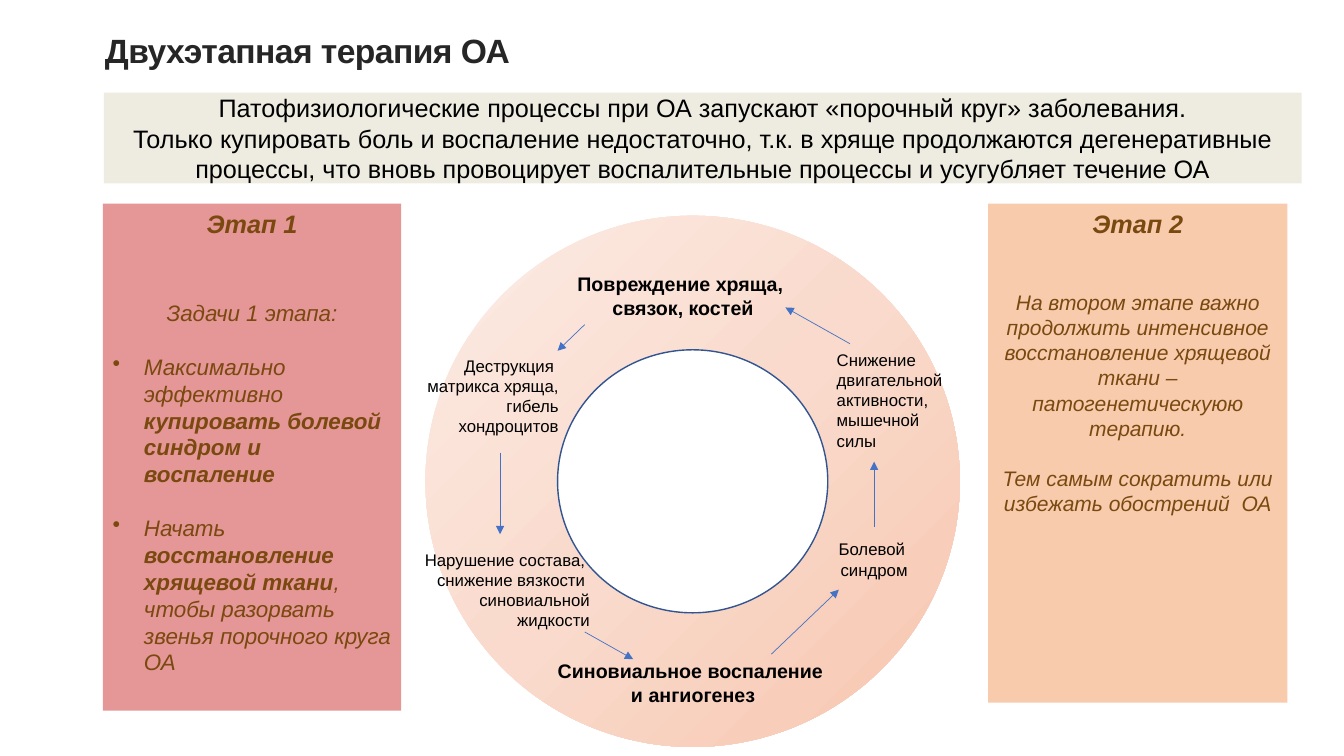
from lxml import etree
from pptx import Presentation
from pptx.dml.color import RGBColor
from pptx.enum.shapes import MSO_CONNECTOR, MSO_SHAPE
from pptx.enum.text import MSO_ANCHOR, MSO_AUTO_SIZE, PP_ALIGN
from pptx.oxml import parse_xml
from pptx.oxml.ns import nsdecls, qn
from pptx.util import Inches, Pt

LEFT, CENTER, RIGHT = PP_ALIGN.LEFT, PP_ALIGN.CENTER, PP_ALIGN.RIGHT
TOP, MIDDLE = MSO_ANCHOR.TOP, MSO_ANCHOR.MIDDLE
RECTANGLE, OVAL = MSO_SHAPE.RECTANGLE, MSO_SHAPE.OVAL
BLACK = RGBColor(0x00, 0x00, 0x00)
WHITE = RGBColor(0xFF, 0xFF, 0xFF)
TITLE_GREY = RGBColor(0x26, 0x26, 0x26)
BANNER_BEIGE = RGBColor(0xEE, 0xEC, 0xE1)
STAGE_RED = RGBColor(0xC0, 0x00, 0x00)
STAGE_PEACH = RGBColor(0xF8, 0xCB, 0xAD)
STAGE_BROWN = RGBColor(0x79, 0x49, 0x0F)
HOLE_LINE = RGBColor(0x32, 0x54, 0x91)
ARROW_BLUE = RGBColor(0x44, 0x72, 0xC4)
RING_STOPS = [(0, RGBColor(0xF7, 0xC5, 0xAE)), (50, RGBColor(0xF9, 0xDA, 0xCC)),
              (100, RGBColor(0xFC, 0xEC, 0xE6))]
FONT = "Arial"
LINE_HEIGHT = 1.2  # share of the font size

# Content
TITLE = "Двухэтапная терапия ОА"
BANNER = [
    "Патофизиологические процессы при ОА запускают «порочный круг» заболевания.",
    "Только купировать боль и воспаление недостаточно, т.к. в хряще продолжаются "
    "дегенеративные процессы, что вновь провоцирует воспалительные процессы и "
    "усугубляет течение ОА",
]
# Ring labels: left, top, width, size, bold, alignment, lines
LABELS = [
    (5.62, 2.65, 2.31, 14, True, CENTER, ["Повреждение хряща, ", "связок, костей"]),
    (4.12, 3.48, 1.52, 12, False, RIGHT,
     ["Деструкция ", "матрикса хряща,", "гибель", "хондроцитов"]),
    (4.10, 5.40, 1.85, 12, False, RIGHT,
     ["Нарушение состава, ", "снижение вязкости ", "синовиальной", "жидкости"]),
    (5.42, 6.49, 2.91, 14, True, CENTER, ["Синовиальное воспаление ", "и ангиогенез"]),
    (8.21, 5.30, 0.92, 12, False, CENTER, ["Болевой ", "синдром"]),
    (8.20, 3.42, 1.31, 12, False, LEFT,
     ["Снижение", "двигательной", "активности,", "мышечной", "силы"]),
]
# Arrows round the ring: from x, from y, to x, to y
ARROWS = [
    (5.80, 3.22, 5.53, 3.48), (4.96, 4.49, 4.96, 5.30), (5.80, 6.27, 6.28, 6.54),
    (7.65, 6.49, 8.32, 5.85), (8.67, 5.23, 8.67, 4.58), (8.43, 3.41, 7.79, 3.05),
]
# Stage paragraphs: blank lines before (in points of type), bulleted, (text, bold) runs
STAGES = [
    {"box": (1.02, 2.02, 2.96, 5.03), "fill": STAGE_RED, "opacity": 41, "size": 16,
     "heading": "Этап 1", "body": [
         (36, False, [("Задачи 1 этапа:", False)]),
         (16, True, [("Максимально эффективно ", False),
                     ("купировать болевой синдром и воспаление", True)]),
         (16, True, [("Начать ", False), ("восстановление хрящевой ткани", True),
                     (", чтобы разорвать звенья порочного круга ОА", False)])]},
    {"box": (9.80, 2.02, 2.97, 4.95), "fill": STAGE_PEACH, "opacity": 100, "size": 15,
     "heading": "Этап 2", "body": [
         (30, False, [("На втором этапе важно продолжить интенсивное восстановление "
                       "хрящевой ткани – патогенетическуюю терапию.", False)]),
         (15, False, [("Тем самым сократить или избежать обострений  ОА", False)])]},
]

presentation = Presentation()
presentation.slide_width, presentation.slide_height = Inches(13.33), Inches(7.5)
slide = presentation.slides.add_slide(presentation.slide_layouts[5])


def add_filled_shape(kind, box, color):
    shape = slide.shapes.add_shape(kind, *map(Inches, box))
    shape.shadow.inherit = False
    shape.fill.solid()
    shape.fill.fore_color.rgb = color
    shape.line.fill.background()
    return shape


def style(paragraph, size, color, alignment, bold=False, italic=False):
    paragraph.alignment = alignment
    font = paragraph.font
    font.name, font.size, font.bold, font.italic = FONT, Pt(size), bold, italic
    font.color.rgb = color


def write_lines(frame, lines, size, alignment, bold=False):
    for index, line in enumerate(lines):
        paragraph = frame.paragraphs[0] if index == 0 else frame.add_paragraph()
        paragraph.text = line
        style(paragraph, size, BLACK, alignment, bold)


def add_bullet(paragraph):
    properties = paragraph._p.get_or_add_pPr()
    properties.set("marL", str(Inches(0.31)))
    properties.set("indent", str(-Inches(0.31)))
    bullet = parse_xml(f'<a:buChar {nsdecls("a")} char="•"/>')
    properties.insert_element_before(bullet, "a:tabLst", "a:defRPr", "a:extLst")


# Title
title = slide.shapes.title
title.left, title.top, title.width, title.height = map(Inches, (0.94, 0.25, 12.33, 0.5))
title.text_frame.text = TITLE
title.text_frame.vertical_anchor = MIDDLE
title.text_frame.auto_size = MSO_AUTO_SIZE.NONE
heading = title.text_frame.paragraphs[0]
style(heading, 24, TITLE_GREY, LEFT, bold=True)
heading.runs[0]._r.get_or_add_rPr().set("spc", "-40")

# Banner
banner = add_filled_shape(RECTANGLE, (1.03, 0.92, 11.88, 0.9), BANNER_BEIGE)
banner.text_frame.word_wrap = True
banner.text_frame.vertical_anchor = MIDDLE
write_lines(banner.text_frame, BANNER, 18, CENTER)

# Ring with its gradient spreading from the lower right corner
ring = add_filled_shape(OVAL, (4.22, 2.14, 5.3, 5.27), STAGE_PEACH)
stops = "".join(f'<a:gs pos="{share * 1000}"><a:srgbClr val="{color}"/></a:gs>'
                for share, color in RING_STOPS)
gradient = parse_xml(
    f'<a:gradFill {nsdecls("a")} rotWithShape="1"><a:gsLst>{stops}</a:gsLst>'
    '<a:path path="circle"><a:fillToRect l="100000" t="100000"/></a:path></a:gradFill>')
solid = ring._element.spPr.find(qn("a:solidFill"))
ring._element.spPr.replace(solid, gradient)
hole = add_filled_shape(OVAL, (5.53, 3.47, 2.68, 2.61), WHITE)
hole.line.color.rgb = HOLE_LINE
hole.line.width = Pt(1)

# Ring labels
for left, top, width, size, bold, alignment, lines in LABELS:
    height = 0.1 + len(lines) * size * LINE_HEIGHT / 72
    label = slide.shapes.add_textbox(*map(Inches, (left, top, width, height)))
    label.text_frame.word_wrap = False
    write_lines(label.text_frame, lines, size, alignment, bold)

# Arrows
for ends in ARROWS:
    arrow = slide.shapes.add_connector(MSO_CONNECTOR.STRAIGHT, *map(Inches, ends))
    arrow.line.color.rgb = ARROW_BLUE
    arrow.line.width = Pt(0.5)
    etree.SubElement(arrow.line._get_or_add_ln(), qn("a:tailEnd"), type="triangle")
    etree.SubElement(arrow._element.spPr, qn("a:effectLst"))

# Stage panels
for stage in STAGES:
    panel = add_filled_shape(RECTANGLE, stage["box"], stage["fill"])
    if stage["opacity"] < 100:
        color = panel._element.spPr.find(qn("a:solidFill")).find(qn("a:srgbClr"))
        etree.SubElement(color, qn("a:alpha"), val=str(stage["opacity"] * 1000))
    frame = panel.text_frame
    frame.word_wrap = True
    frame.vertical_anchor = TOP
    frame.text = stage["heading"]
    style(frame.paragraphs[0], 18, STAGE_BROWN, CENTER, bold=True, italic=True)
    for gap, bulleted, runs in stage["body"]:
        paragraph = frame.add_paragraph()
        style(paragraph, stage["size"], STAGE_BROWN, LEFT if bulleted else CENTER, italic=True)
        paragraph.space_before = Pt(gap * LINE_HEIGHT)
        if bulleted:
            add_bullet(paragraph)
        for text, bold in runs:
            run = paragraph.add_run()
            run.text = text
            run.font.bold = bold

presentation.save("out.pptx")
